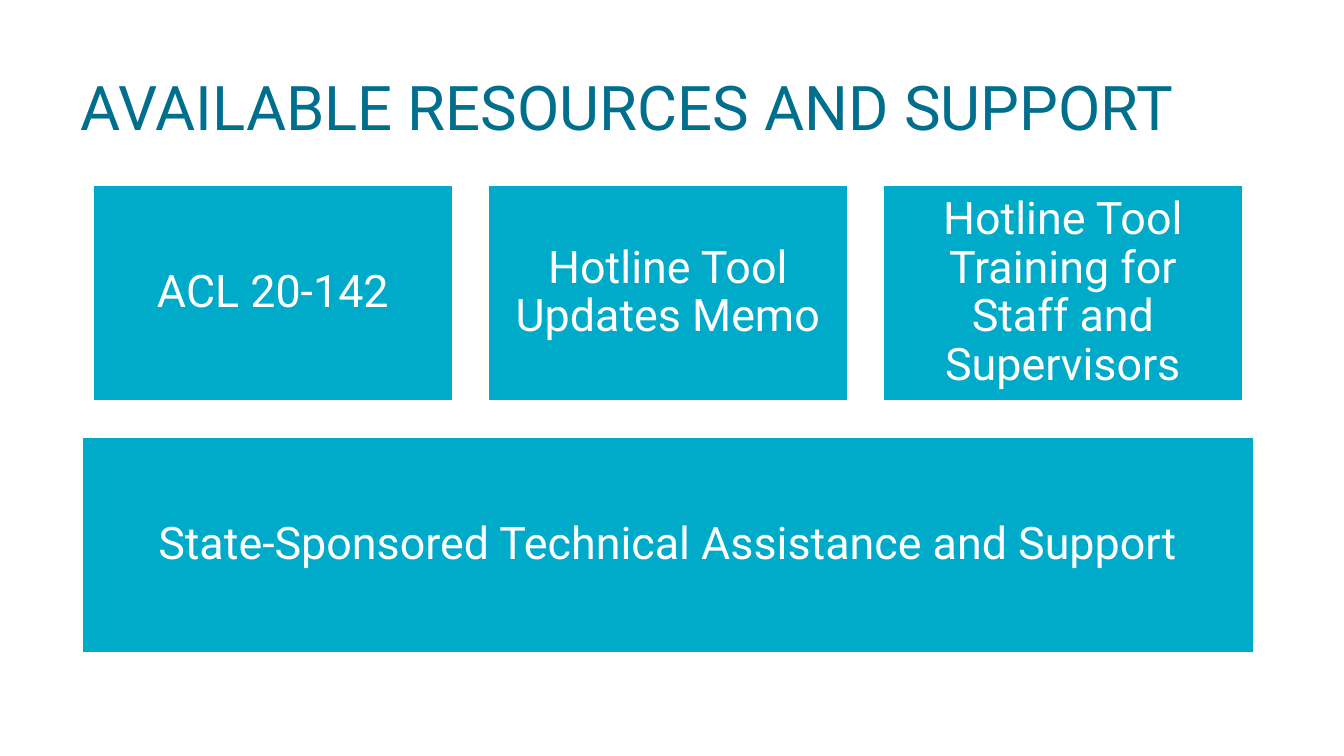
from pptx import Presentation
from pptx.dml.color import RGBColor
from pptx.enum.shapes import MSO_SHAPE
from pptx.enum.text import MSO_ANCHOR, PP_ALIGN
from pptx.util import Pt

PX = 12192000 / 1344
FONT = "Roboto"
COLORS = {"title": "006E8D", "box": "00ABCA", "white": "FFFFFF"}
RESOURCES = [
    "ACL 20-142",
    "Hotline Tool Updates Memo",
    "Hotline Tool Training for Staff and Supervisors",
]
SUPPORT = "State-Sponsored Technical Assistance and Support"


def px(n):
    return round(n * PX)


def color(name):
    return RGBColor.from_string(COLORS[name])


def set_text(tf, text, size, color_name, align):
    tf.word_wrap = True
    tf.vertical_anchor = MSO_ANCHOR.MIDDLE
    p = tf.paragraphs[0]
    p.text = text
    p.alignment = align
    p.line_spacing = 0.9
    p.font.name = FONT
    p.font.size = Pt(size)
    p.font.color.rgb = color(color_name)


def add_title(s, text, x, y, w, h):
    sp = s.shapes.add_textbox(px(x), px(y), px(w), px(h))
    set_text(sp.text_frame, text, 44, "title", PP_ALIGN.LEFT)


def add_box(s, text, x, y, w, h):
    sp = s.shapes.add_shape(MSO_SHAPE.RECTANGLE, px(x), px(y), px(w), px(h))
    sp.shadow.inherit = False
    sp.fill.solid()
    sp.fill.fore_color.rgb = color("box")
    sp.line.color.rgb = color("white")
    sp.line.width = Pt(1)
    tf = sp.text_frame
    tf.margin_left = tf.margin_right = tf.margin_top = tf.margin_bottom = px(13)
    set_text(tf, text, 32, "white", PP_ALIGN.CENTER)


def main():
    prs = Presentation()
    prs.slide_width = px(1344)
    prs.slide_height = px(756)
    s = prs.slides.add_slide(prs.slide_layouts[6])
    add_title(s, "AVAILABLE RESOURCES AND SUPPORT", 71, 40, 1202, 141)
    for i, text in enumerate(RESOURCES):
        add_box(s, text, 93 + i * 395, 185, 360, 216)
    add_box(s, SUPPORT, 82, 437, 1172, 216)
    prs.save("out.pptx")


if __name__ == "__main__":
    main()
